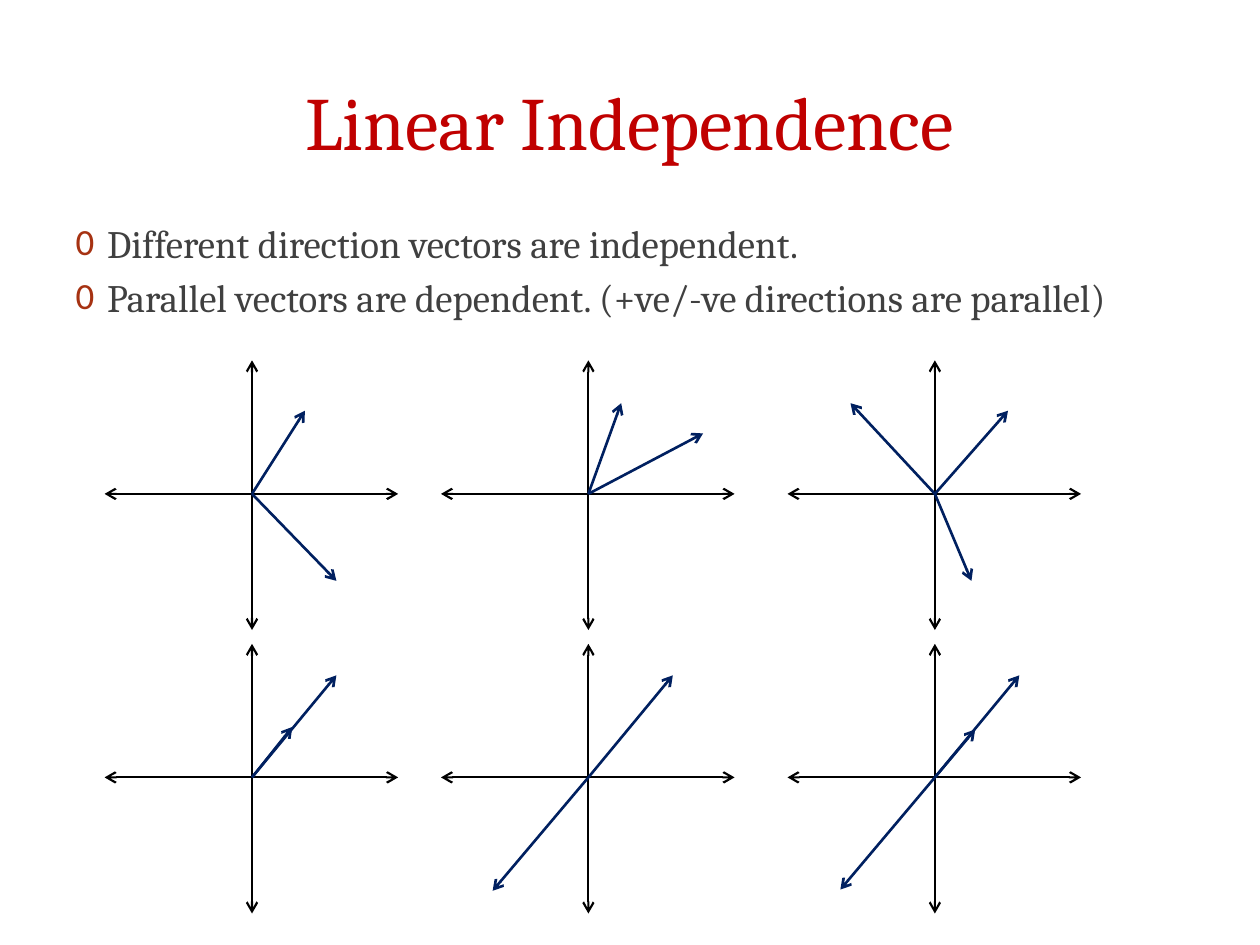
import pptx
import pptx.dml.color
import pptx.enum.shapes
import pptx.enum.text
import pptx.oxml
import pptx.oxml.ns
import pptx.util

Inches = pptx.util.Inches
Pt = pptx.util.Pt

COLORS = {"title": "C00000", "body": "404040", "bullet": "A63212",
          "axis": "000000", "vector": "002060"}
FONT = "Cambria"
PLOT_LEFTS = (0.83, 3.5, 6.25)
PLOT_TOPS = (2.86, 5.11)
PLOT_WIDTH, PLOT_HEIGHT = 2.33, 2.14
ORIGIN_X, ORIGIN_Y = 1.17, 1.06
VECTOR_ROWS = (
    (((0.42, -0.66), (0.67, 0.69)),
     ((0.26, -0.72), (0.91, -0.48)),
     ((-0.67, -0.72), (0.58, -0.66), (0.29, 0.69))),
    (((0.32, -0.4), (0.67, -0.81)),
     ((0.67, -0.81), (-0.76, 0.9)),
     ((0.67, -0.81), (-0.75, 0.89), (0.32, -0.38))),
)


def rgb(name):
    """Return the named colour."""
    return pptx.dml.color.RGBColor.from_string(COLORS[name])


def append_element(parent, xml):
    """Append a DrawingML element written without its namespace."""
    tag, rest = xml[1:].split("|", 1)
    namespace = pptx.oxml.ns.nsdecls("a")
    element = pptx.oxml.parse_xml(f"<a:{tag} {namespace} {rest}")
    parent.append(element)


def place(shape, left, top, width, height):
    """Move and size a shape in inches."""
    shape.left, shape.top = Inches(left), Inches(top)
    shape.width, shape.height = Inches(width), Inches(height)


def write(paragraph, text, size, color, align, bullet=None, before=0):
    """Write formatted text into a paragraph."""
    if bullet:
        properties = paragraph._p.get_or_add_pPr()
        properties.set("marL", str(Inches(0.25)))
        properties.set("indent", str(Inches(-0.25)))
        append_element(properties, f'<buClr|><a:srgbClr val="{COLORS["bullet"]}"/></a:buClr>')
        append_element(properties, '<buSzPct|val="95000"/>')
        append_element(properties, '<buFont|typeface="+mn-lt"/>')
        append_element(properties, f'<buChar|char="{bullet}"/>')
    paragraph.alignment = align
    paragraph.space_before = Pt(before)
    paragraph.text = text
    paragraph.font.name = FONT
    paragraph.font.size = Pt(size)
    paragraph.font.color.rgb = rgb(color)


def add_title(slide, left, top, width, height):
    """Fill the title placeholder."""
    title = slide.shapes.title
    place(title, left, top, width, height)
    title.text_frame.vertical_anchor = pptx.enum.text.MSO_ANCHOR.MIDDLE
    write(title.text_frame.paragraphs[0], "Linear Independence", size=43,
          color="title", align=pptx.enum.text.PP_ALIGN.CENTER)


def add_body(slide, left, top, width, height):
    """Fill the body placeholder with the two rules."""
    body = slide.placeholders[1]
    place(body, left, top, width, height)
    rules = ("Different direction vectors are independent.",
             "Parallel vectors are dependent. (+ve/-ve directions are parallel)")
    frame = body.text_frame
    for index, rule in enumerate(rules):
        paragraph = frame.add_paragraph() if index else frame.paragraphs[0]
        write(paragraph, rule, size=22.2, color="body", bullet="0",
              align=pptx.enum.text.PP_ALIGN.LEFT, before=4.4 if index else 0)


def add_arrow(shapes, start, end, color, width, both_ends=False):
    """Draw a straight arrow between two points in inches."""
    connector = shapes.add_connector(
        pptx.enum.shapes.MSO_CONNECTOR.STRAIGHT,
        *(Inches(value) for value in (*start, *end)))
    connector.line.color.rgb = rgb(color)
    connector.line.width = Pt(width)
    line = connector.line._get_or_add_ln()
    if both_ends:
        append_element(line, '<headEnd|type="arrow"/>')
    append_element(line, '<tailEnd|type="arrow"/>')
    append_element(connector._element.spPr, "<effectLst|/>")


def add_plot(shapes, left, top, vectors):
    """Draw a pair of axes and the vectors that leave their origin."""
    x, y = left + ORIGIN_X, top + ORIGIN_Y
    axes = (((left, y), (left + PLOT_WIDTH, y)),
            ((x, top), (x, top + PLOT_HEIGHT)))
    for start, end in axes:
        add_arrow(shapes, start, end, "axis", 1.25, both_ends=True)
    for across, down in vectors:
        add_arrow(shapes, (x, y), (x + across, y + down), "vector", 1.5)


def main():
    """Build and save the slide."""
    presentation = pptx.Presentation()
    presentation.slide_width, presentation.slide_height = Inches(10), Inches(7.5)
    slide = presentation.slides.add_slide(presentation.slide_layouts[1])
    add_title(slide, 0.6, 0.41, 8.79, 1.09)
    add_body(slide, 0.5, 1.69, 9, 1.25)
    for top, row in zip(PLOT_TOPS, VECTOR_ROWS):
        group = slide.shapes.add_group_shape()
        for left, vectors in zip(PLOT_LEFTS, row):
            add_plot(group.shapes, left, top, vectors)
    presentation.save("out.pptx")


if __name__ == "__main__":
    main()
